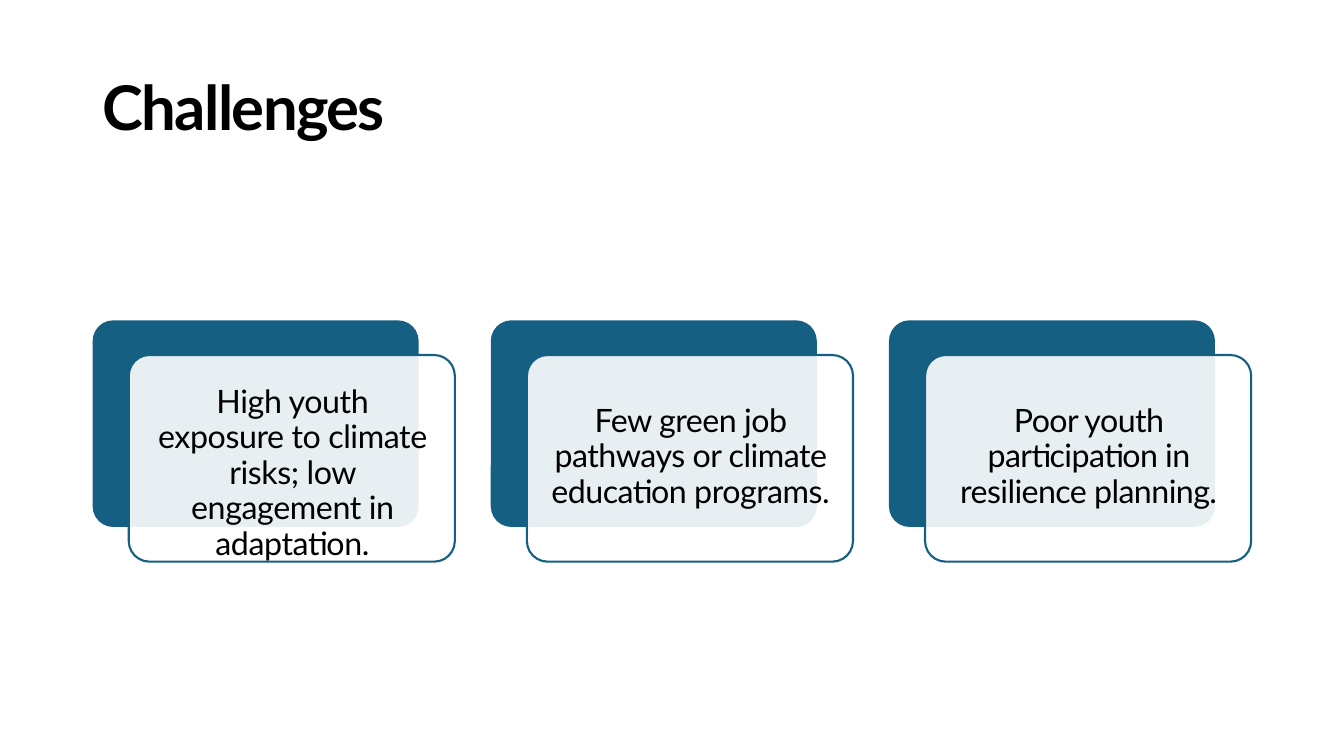
from pptx import Presentation
from pptx.util import Pt
from pptx.dml.color import RGBColor
from pptx.enum import shapes, text
from pptx.oxml import xmlchemy as xml
from lxml import etree

HEX = {"blue": "155F82", "white": "FFFFFF", "black": "000000"}
FONT = {"name": "Lato", "size": Pt(23), "bold": False}
HEAD = {"name": "Lato", "size": Pt(44), "bold": True}
FRAME = {
    "margin_left": 0, "margin_right": 0, "margin_top": Pt(3.6),
    "margin_bottom": 0, "word_wrap": True,
    "auto_size": text.MSO_AUTO_SIZE.NONE,
    "vertical_anchor": text.MSO_ANCHOR.TOP,
}
CARDS = [
    ("High youth exposure to climate risks; low engagement in adaptation.",
     198, 42.4, 106, 0.92, -30),
    ("Few green job pathways or climate education programs.",
     207, 55.4, 81, Pt(25.5), -38),
    ("Poor youth participation in resilience planning.",
     196, 55.4, 81, Pt(25.5), -42),
]


def color(key):
    return RGBColor.from_string(HEX[key])


def assign(obj, vals):
    for key, val in vals.items():
        setattr(obj, key, val)


def place(x, y, w, h):
    return [Pt(v) for v in (x, y, w, h)]


def write(frame, words, font, align, space, lead):
    para = frame.paragraphs[0]
    assign(para, {"alignment": align, "line_spacing": lead})
    run = para.add_run()
    run.text = words
    assign(run.font, font)
    run.font.color.rgb = color("black")
    run._r.get_or_add_rPr().set("spc", str(space))


def add_title(slide, x, y, w, h):
    title = slide.shapes.title
    title.left, title.top, title.width, title.height = place(x, y, w, h)
    assign(title.text_frame, FRAME)
    assign(title.text_frame, {"margin_left": Pt(7.2), "margin_top": Pt(17.3)})
    write(title.text_frame, "Challenges", HEAD, text.PP_ALIGN.LEFT, -120, 1.0)


def add_panel(slide, box, fill):
    panel = slide.shapes.add_shape(
        shapes.MSO_SHAPE.ROUNDED_RECTANGLE, *place(*box))
    panel.adjustments[0] = 0.1
    panel.shadow.inherit = False
    panel.fill.solid()
    panel.fill.fore_color.rgb = color(fill)
    return panel


def add_card(slide, x, y, w, h, card):
    words, wide, drop, tall, lead, space = card
    back = add_panel(slide, (x, y, w, h), "blue")
    back.line.fill.background()

    front = add_panel(slide, (x + 25.8, y + 24.8, w, h), "white")
    front.line.color.rgb = color("blue")
    front.line.width = Pt(1.5)
    tint = front.fill._xPr.find(".//" + xml.qn("a:srgbClr"))
    etree.SubElement(tint, xml.qn("a:alpha")).set("val", "90000")

    mid = x + 142.7
    label = slide.shapes.add_textbox(
        *place(mid - wide / 2, y + drop, wide, tall))
    assign(label.text_frame, FRAME)
    write(label.text_frame, words, FONT, text.PP_ALIGN.CENTER, space, lead)


def main():
    deck = Presentation()
    assign(deck, {"slide_width": Pt(960), "slide_height": Pt(540)})
    slide = deck.slides.add_slide(deck.slide_layouts[5])
    add_title(slide, 66.2, 31.7, 827.3, 70.6)
    for i, card in enumerate(CARDS):
        add_card(slide, 66.2 + i * 284.4, 228.8, 232.9, 147.6, card)
    deck.save("out.pptx")


if __name__ == "__main__":
    main()
